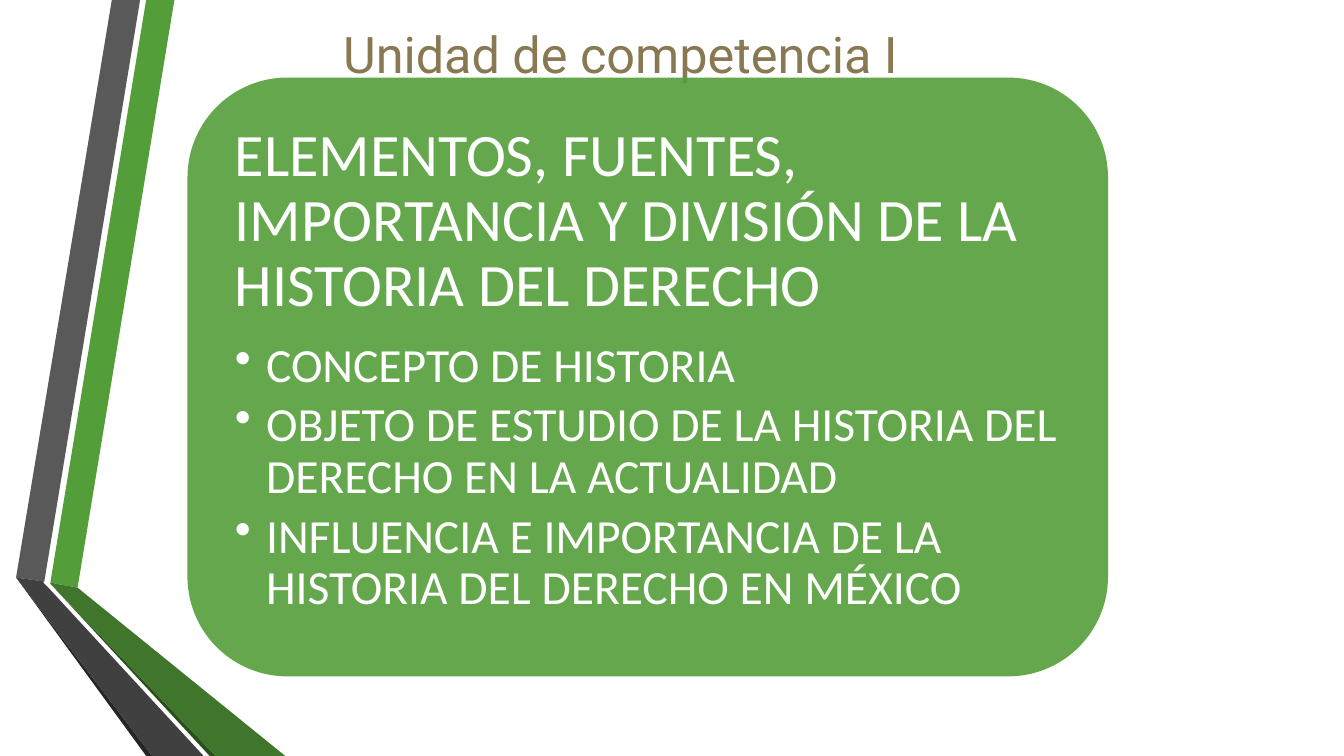
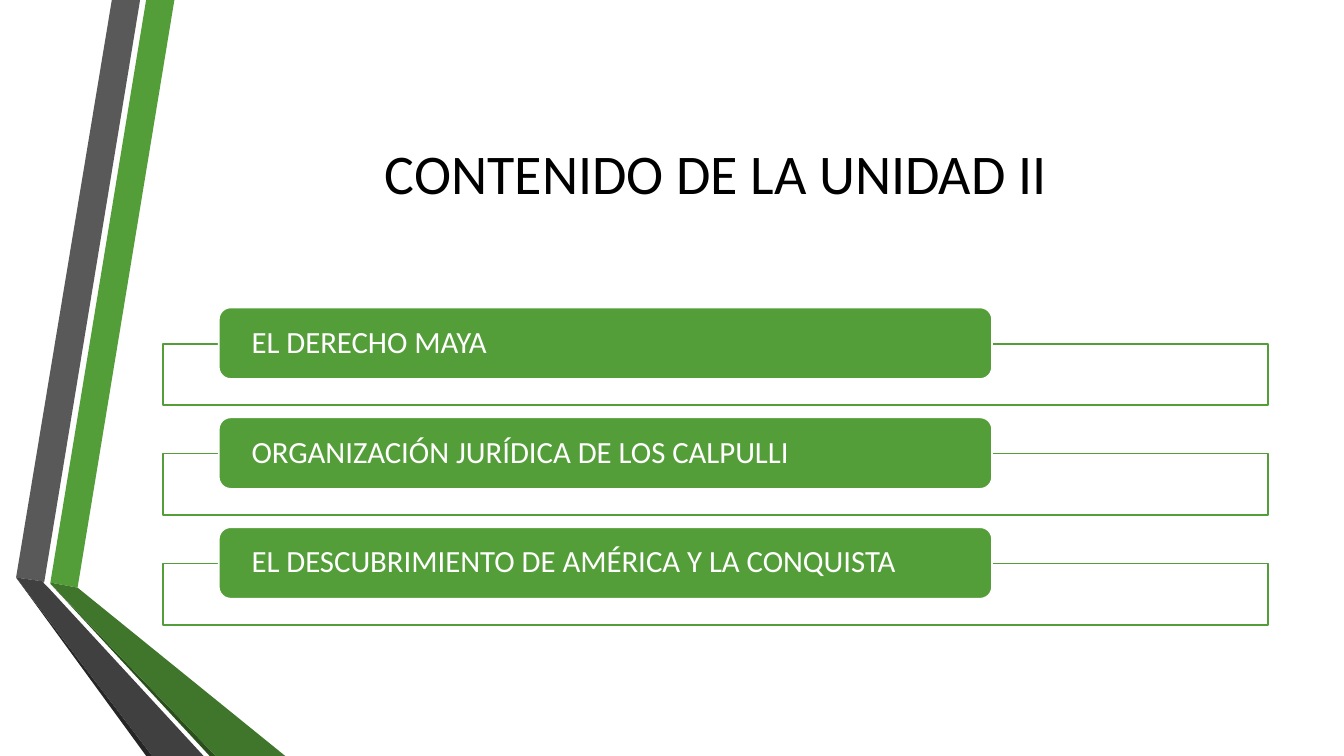
"""Build two course slides: the first unit's topics and the second unit's contents."""
import pptx
import pptx.dml.color
import pptx.enum.shapes
import pptx.enum.text
import pptx.oxml
import pptx.oxml.ns
import pptx.util

PX = 9144
GREEN, WHITE, BLACK, TAN = "549E39", "FFFFFF", "000000", "887952"
SHAPE = pptx.enum.shapes.MSO_SHAPE
ANCHOR = pptx.enum.text.MSO_ANCHOR
ALIGN = pptx.enum.text.PP_ALIGN

BANDS = [
    (GREEN, [(50, 578), (77, 583), (173, 0), (145, 0)]),
    ("595959", [(139, 0), (111, 0), (16, 573), (44, 577)]),
    ("262626", [(16, 573), (145, 750), (151, 750)]),
    ("2A4F1C", [(50, 579), (208, 750), (214, 750)]),
    ("3F762B", [(50, 579), (214, 750), (283, 750), (77, 583), (50, 578)]),
    ("404040", [(202, 750), (48, 583), (43, 578), (44, 577), (16, 573), (151, 750)]),
]

UNIT_TITLE = "Unidad de competencia I"
UNIT_HEADING = "ELEMENTOS, FUENTES, IMPORTANCIA Y DIVISIÓN DE LA HISTORIA DEL DERECHO"
UNIT_TOPICS = [
    "CONCEPTO DE HISTORIA",
    "OBJETO DE ESTUDIO DE LA HISTORIA DEL DERECHO EN LA ACTUALIDAD",
    "INFLUENCIA E IMPORTANCIA DE LA HISTORIA DEL DERECHO EN MÉXICO",
]
CONTENTS_TITLE = "CONTENIDO DE LA UNIDAD II"
CONTENTS = [
    "EL DERECHO MAYA",
    "ORGANIZACIÓN JURÍDICA DE LOS CALPULLI",
    "EL DESCUBRIMIENTO DE AMÉRICA Y LA CONQUISTA",
]
ROW_TOP, ROW_PITCH, FRAME_DROP = 305, 109, 36


def px(n):
    return pptx.util.Emu(round(n * PX))


def rgb(color):
    return pptx.dml.color.RGBColor.from_string(color)


def assign(target, values):
    for name, value in values.items():
        setattr(target, name, value)


def paint(sp, fill, line=None, alpha=None):
    sp.shadow.inherit = False
    sp.fill.solid()
    sp.fill.fore_color.rgb = rgb(fill)
    if alpha:
        clr = sp.fill._xPr.find(".//" + pptx.oxml.ns.qn("a:srgbClr"))
        ns = pptx.oxml.ns.nsdecls("a")
        clr.append(pptx.oxml.parse_xml(f'<a:alpha {ns} val="{alpha * 1000}"/>'))
    if line:
        sp.line.color.rgb = rgb(line)
        sp.line.width = pptx.util.Pt(1.25)
    else:
        sp.line.fill.background()


def add_box(s, kind, box, fill, line=None, alpha=None):
    sp = s.shapes.add_shape(kind, *map(px, box))
    paint(sp, fill, line, alpha)
    return sp


def set_frame(tf, anchor, across, down):
    assign(tf, {
        "word_wrap": True, "vertical_anchor": anchor,
        "margin_left": px(across), "margin_right": px(across),
        "margin_top": px(down), "margin_bottom": px(down),
    })


def write(p, text, size, color, font="Calibri", **layout):
    assign(p, {"alignment": ALIGN.LEFT, **layout})
    r = p.add_run()
    r.text = text
    assign(r.font, {"size": pptx.util.Pt(size), "name": font})
    r.font.color.rgb = rgb(color)


def add_bullet(p, indent):
    pPr = p._p.get_or_add_pPr()
    pPr.set("marL", str(px(indent)))
    pPr.set("indent", str(-px(indent)))
    ns = pptx.oxml.ns.nsdecls("a")
    pPr.append(pptx.oxml.parse_xml(f'<a:buChar {ns} char="•"/>'))


def add_title(s, text, box, size, color, font="Calibri"):
    tf = s.shapes.add_textbox(*map(px, box)).text_frame
    set_frame(tf, ANCHOR.MIDDLE, 10, 5)
    write(tf.paragraphs[0], text, size, color, font, alignment=ALIGN.CENTER)


def new_slide(prs):
    s = prs.slides.add_slide(prs.slide_layouts[6])
    for color, points in BANDS:
        start, *rest = points
        fb = s.shapes.build_freeform(*start, scale=PX)
        fb.add_line_segments(rest, close=True)
        paint(fb.convert_to_shape(), color)
    return s


def unit_slide(prs):
    s = new_slide(prs)
    add_title(s, UNIT_TITLE, (192, 3, 847, 100), 36, TAN, "Roboto")
    card = add_box(s, SHAPE.ROUNDED_RECTANGLE, (186, 77, 913, 594), GREEN, alpha=90)
    tf = card.text_frame
    set_frame(tf, ANCHOR.TOP, 18, 18)
    write(tf.paragraphs[0], UNIT_HEADING, 43, WHITE,
          line_spacing=0.9, space_after=pptx.util.Pt(15))
    for topic in UNIT_TOPICS:
        p = tf.add_paragraph()
        write(p, topic, 34, WHITE, line_spacing=0.9, space_after=pptx.util.Pt(6))
        add_bullet(p, 31)


def contents_slide(prs):
    s = new_slide(prs)
    add_title(s, CONTENTS_TITLE, (162, 75, 1096, 192), 40, BLACK)
    for i, text in enumerate(CONTENTS):
        top = ROW_TOP + i * ROW_PITCH
        add_box(s, SHAPE.RECTANGLE, (162, top + FRAME_DROP, 1096, 61), WHITE, GREEN, 90)
        bar = add_box(s, SHAPE.ROUNDED_RECTANGLE, (217, top, 767, 71), GREEN, WHITE)
        set_frame(bar.text_frame, ANCHOR.MIDDLE, 29, 0)
        write(bar.text_frame.paragraphs[0], text, 22, WHITE, line_spacing=0.9)


def main():
    prs = pptx.Presentation()
    assign(prs, {"slide_width": px(1333), "slide_height": px(750)})
    unit_slide(prs)
    contents_slide(prs)
    prs.save("out.pptx")


if __name__ == "__main__":
    main()
